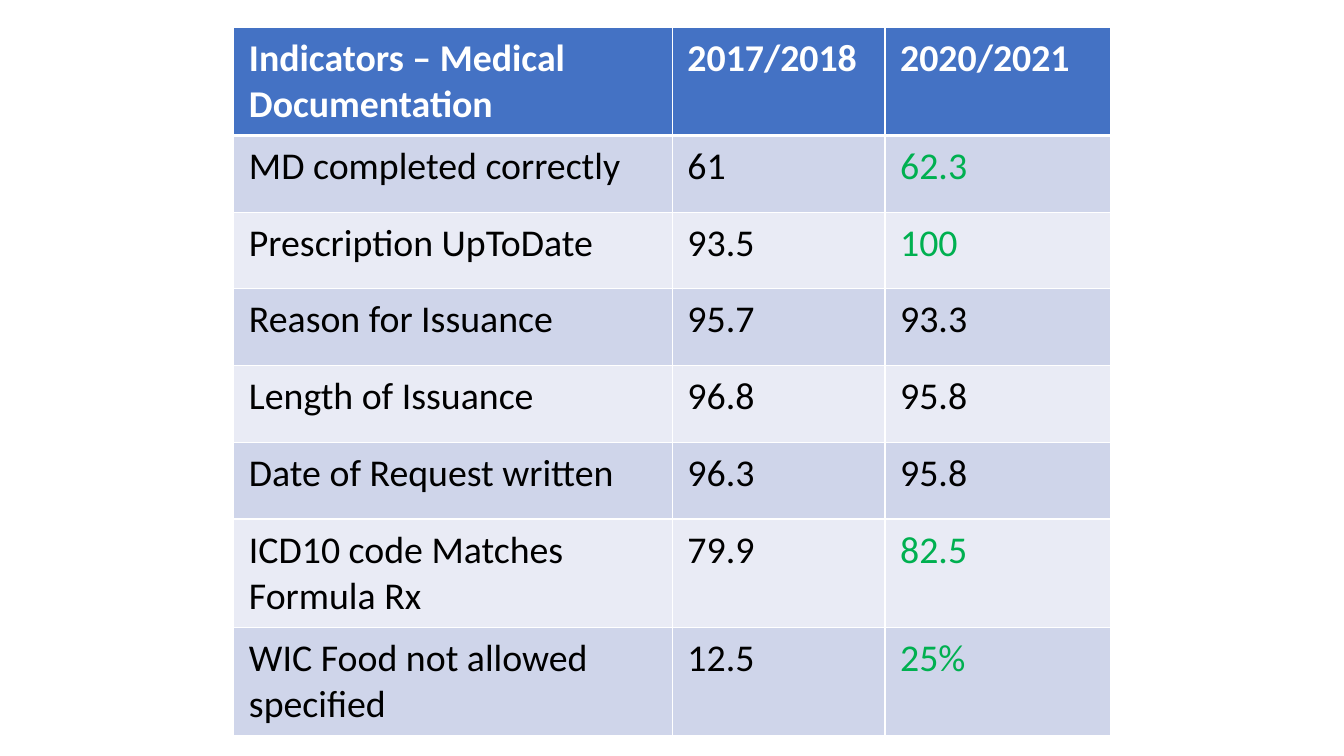
"""Build a slide with a table comparing medical documentation indicators."""
import dataclasses

import lxml.etree
import pptx
import pptx.dml.color
import pptx.oxml.ns
import pptx.table
import pptx.util

SLIDE_WIDTH = pptx.util.Inches(13.33)
SLIDE_HEIGHT = pptx.util.Inches(7.5)
TABLE_LEFT = 0.174
TABLE_TOP = 0.036
ROW_SHARE = 0.1015
COLUMN_SHARES = (0.3263, 0.1583, 0.168)
THIN, THICK = 1, 3
COLORS = {
    "header": "4472C4",
    "odd": "CFD5EA",
    "even": "E9EBF5",
    "white": "FFFFFF",
    "text": "000000",
    "improved": "00B050",
}


@dataclasses.dataclass(frozen=True)
class Indicator:
    name: str
    earlier: str
    later: str

    @property
    def improved(self) -> bool:
        return float(self.later.rstrip("%")) > float(self.earlier)


HEADINGS = ("Indicators – Medical Documentation", "2017/2018", "2020/2021")
INDICATORS = (
    Indicator("MD completed correctly", "61", "62.3"),
    Indicator("Prescription UpToDate", "93.5", "100"),
    Indicator("Reason for Issuance", "95.7", "93.3"),
    Indicator("Length of Issuance", "96.8", "95.8"),
    Indicator("Date of Request written", "96.3", "95.8"),
    Indicator("ICD10 code Matches Formula Rx", "79.9", "82.5"),
    Indicator("WIC Food not allowed specified", "12.5", "25%"),
)


def rgb(name: str) -> pptx.dml.color.RGBColor:
    return pptx.dml.color.RGBColor.from_string(COLORS[name])


def set_borders(cell: pptx.table._Cell, top: float, bottom: float) -> None:
    properties = cell._tc.get_or_add_tcPr()
    widths = {"a:lnL": THIN, "a:lnR": THIN, "a:lnT": top, "a:lnB": bottom}
    for position, (tag, width) in enumerate(widths.items()):
        line = lxml.etree.Element(pptx.oxml.ns.qn(tag), w=str(pptx.util.Pt(width)))
        fill = lxml.etree.SubElement(line, pptx.oxml.ns.qn("a:solidFill"))
        lxml.etree.SubElement(fill, pptx.oxml.ns.qn("a:srgbClr"), val=COLORS["white"])
        properties.insert(position, line)


def fill_cell(cell: pptx.table._Cell, text: str, fill: str, color: str, bold: bool) -> None:
    cell.fill.solid()
    cell.fill.fore_color.rgb = rgb(fill)
    cell.margin_left = cell.margin_right = pptx.util.Inches(0.15)
    cell.margin_top = cell.margin_bottom = pptx.util.Inches(0.08)
    cell.text_frame.text = text
    font = cell.text_frame.paragraphs[0].runs[0].font
    font.name = "Calibri"
    font.size = pptx.util.Pt(27)
    font.bold = bold
    font.color.rgb = rgb(color)


def fill_table(table: pptx.table.Table) -> None:
    for column, share in zip(table.columns, COLUMN_SHARES):
        column.width = round(SLIDE_WIDTH * share)
    for column, heading in enumerate(HEADINGS):
        cell = table.cell(0, column)
        fill_cell(cell, heading, "header", "white", True)
        set_borders(cell, THIN, THICK)
    for row, indicator in enumerate(INDICATORS, start=1):
        band = "odd" if row % 2 else "even"
        later_color = "improved" if indicator.improved else "text"
        colors = ("text", "text", later_color)
        for column, text in enumerate(dataclasses.astuple(indicator)):
            cell = table.cell(row, column)
            fill_cell(cell, text, band, colors[column], False)
            set_borders(cell, THICK if row == 1 else THIN, THIN)


def main() -> None:
    presentation = pptx.Presentation()
    presentation.slide_width = SLIDE_WIDTH
    presentation.slide_height = SLIDE_HEIGHT
    slide = presentation.slides.add_slide(presentation.slide_layouts[6])
    row_count = len(INDICATORS) + 1
    shape = slide.shapes.add_table(
        row_count,
        len(HEADINGS),
        round(SLIDE_WIDTH * TABLE_LEFT),
        round(SLIDE_HEIGHT * TABLE_TOP),
        round(SLIDE_WIDTH * sum(COLUMN_SHARES)),
        round(SLIDE_HEIGHT * ROW_SHARE * row_count),
    )
    fill_table(shape.table)
    presentation.save("out.pptx")


if __name__ == "__main__":
    main()
